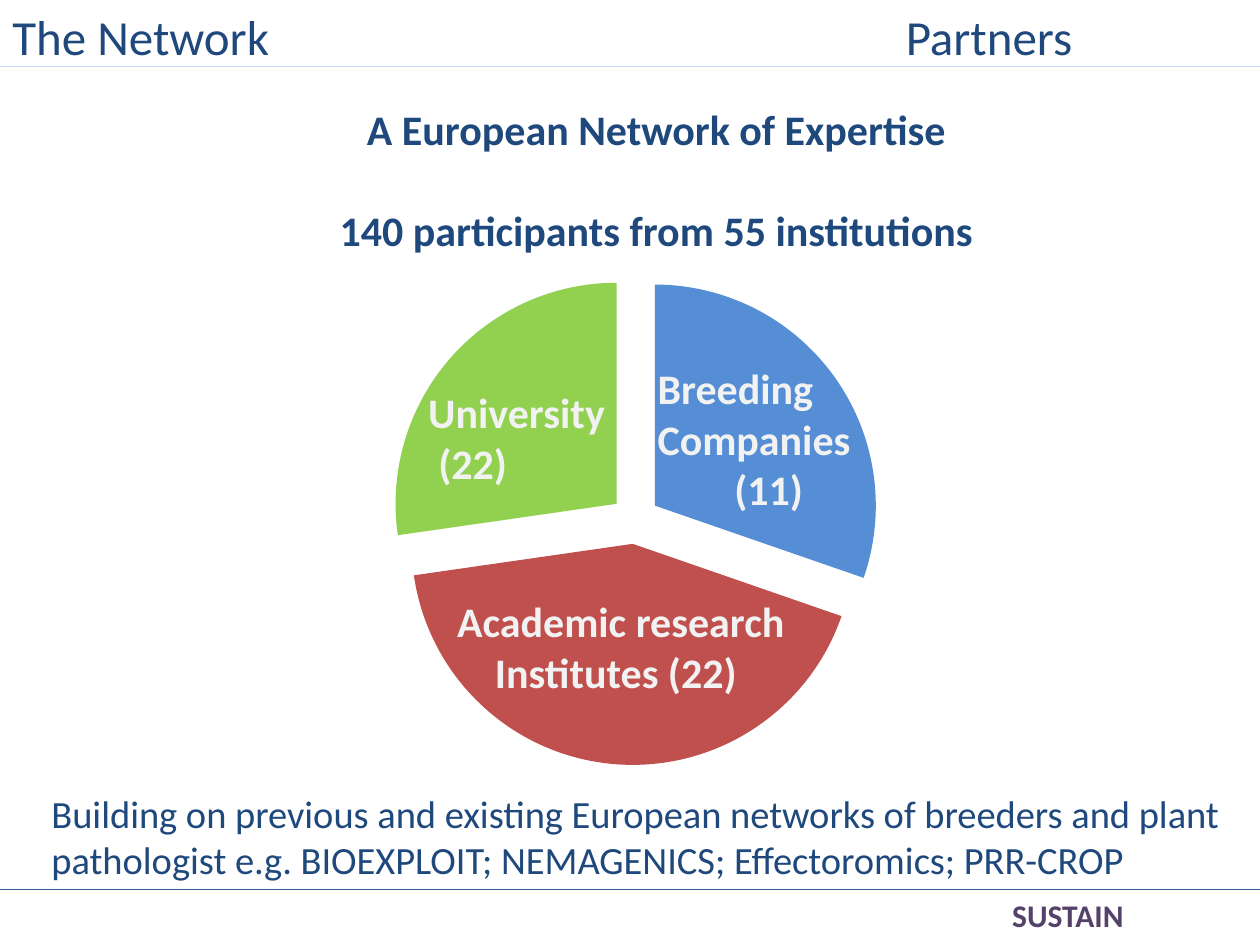
from lxml import etree
from pptx import Presentation
from pptx import util as u
from pptx.chart.data import CategoryChartData
from pptx.dml.color import RGBColor
from pptx.enum import chart as charts, shapes, text
from pptx.oxml.ns import qn

NAVY = RGBColor(0x1F, 0x49, 0x7D)
PALE_BLUE = RGBColor(0xC6, 0xD9, 0xF1)
RULE_BLUE = RGBColor(0x37, 0x60, 0x92)
PURPLE = RGBColor(0x55, 0x42, 0x6A)
LABEL_WHITE = RGBColor(0xF2, 0xF2, 0xF2)
SLICE_COLORS = [
    RGBColor(0x55, 0x8E, 0xD5),
    RGBColor(0xC0, 0x50, 0x4D),
    RGBColor(0x92, 0xD0, 0x50),
]
FONT = "Calibri"
LEFT, CENTER = text.PP_ALIGN.LEFT, text.PP_ALIGN.CENTER


def add_text(slide, box, lines, size, color, bold=False, align=LEFT, wrap=True):
    """Add a text box with one paragraph per line and return its text frame."""
    shape = slide.shapes.add_textbox(*(u.Inches(length) for length in box))
    text_frame = shape.text_frame
    text_frame.word_wrap = wrap
    text_frame.text = "\n".join(lines)
    for paragraph in text_frame.paragraphs:
        paragraph.alignment = align
        for run in paragraph.runs:
            run.font.name = FONT
            run.font.size = u.Pt(size)
            run.font.bold = bold
            run.font.color.rgb = color
    return text_frame


def add_slice_label(slide, box, lines, indent):
    """Add a label whose last line is indented."""
    text_frame = add_text(slide, box, lines, 24, LABEL_WHITE, bold=True, wrap=False)
    properties = text_frame.paragraphs[-1]._p.get_or_add_pPr()
    properties.set("marL", str(u.Inches(indent)))


def add_rule(slide, top, color):
    """Add a thin line across the slide."""
    line = slide.shapes.add_connector(
        shapes.MSO_CONNECTOR.STRAIGHT,
        u.Inches(0), u.Inches(top), u.Inches(10), u.Inches(top))
    line.line.color.rgb = color
    line.line.width = u.Pt(0.75)
    etree.SubElement(line._element.spPr, qn("a:effectLst"))


def add_header(slide):
    text_frame = add_text(slide, (0, 0, 9.29, 0.57), ["The Network\tPartners"], 28, NAVY)
    properties = text_frame.paragraphs[0]._p.get_or_add_pPr()
    tabs = etree.SubElement(properties, qn("a:tabLst"))
    etree.SubElement(tabs, qn("a:tab"), pos=str(u.Inches(7.09)), algn="l")
    add_rule(slide, 0.53, PALE_BLUE)


def add_partner_pie(slide):
    data = CategoryChartData()
    data.categories = ["1", "2", "3"]
    data.add_series("Series 1", [30, 42, 27])
    chart = slide.shapes.add_chart(
        charts.XL_CHART_TYPE.PIE, u.Inches(1.93), u.Inches(2.04),
        u.Inches(6.22), u.Inches(4.17), data).chart
    chart.has_legend = False
    chart.has_title = False
    chart.font.name = FONT
    chart.font.size = u.Pt(10)

    # Pull the slices apart, then colour them
    series = chart.plots[0].series[0]
    explosion = etree.Element(qn("c:explosion"), val="11")
    series._element.find(qn("c:tx")).addnext(explosion)
    for index, color in enumerate(SLICE_COLORS):
        slice_format = series.points[index].format
        slice_format.fill.solid()
        slice_format.fill.fore_color.rgb = color
        slice_format.line.fill.background()


def main():
    presentation = Presentation()
    presentation.slide_width = u.Inches(10)
    presentation.slide_height = u.Inches(7.5)
    slide = presentation.slides.add_slide(presentation.slide_layouts[6])

    # Chart with its heading and labels
    add_partner_pie(slide)
    heading = add_text(
        slide, (2.53, 0.77, 5.36, 1.72),
        ["A European Network of Expertise", "140 participants from 55 institutions"],
        24, NAVY, bold=True, align=CENTER)
    heading.paragraphs[1].space_before = u.Pt(29)
    add_slice_label(slide, (3.3, 3.02, 1.62, 0.91), ["University", "(22)"], 0.08)
    add_slice_label(slide, (5.12, 2.83, 1.75, 1.31),
                    ["Breeding", "Companies", "(11)"], 0.61)
    add_slice_label(slide, (3.53, 4.68, 2.82, 0.91),
                    ["Academic research", "Institutes (22)"], 0.3)

    # Header
    add_header(slide)

    # Footer
    footer = add_text(slide, (6.89, 7.06, 3.17, 0.4), ["SUSTAIN"], 18, PURPLE,
                      bold=True, align=CENTER)
    footer.vertical_anchor = text.MSO_ANCHOR.MIDDLE
    add_rule(slide, 7.06, RULE_BLUE)

    # Closing statement
    add_text(slide, (0.31, 6.22, 9.69, 0.84),
             ["Building on previous and existing European networks of breeders and "
              "plant pathologist e.g. BIOEXPLOIT; NEMAGENICS; Effectoromics; PRR-CROP"],
             22, NAVY)

    presentation.save("out.pptx")


if __name__ == "__main__":
    main()
